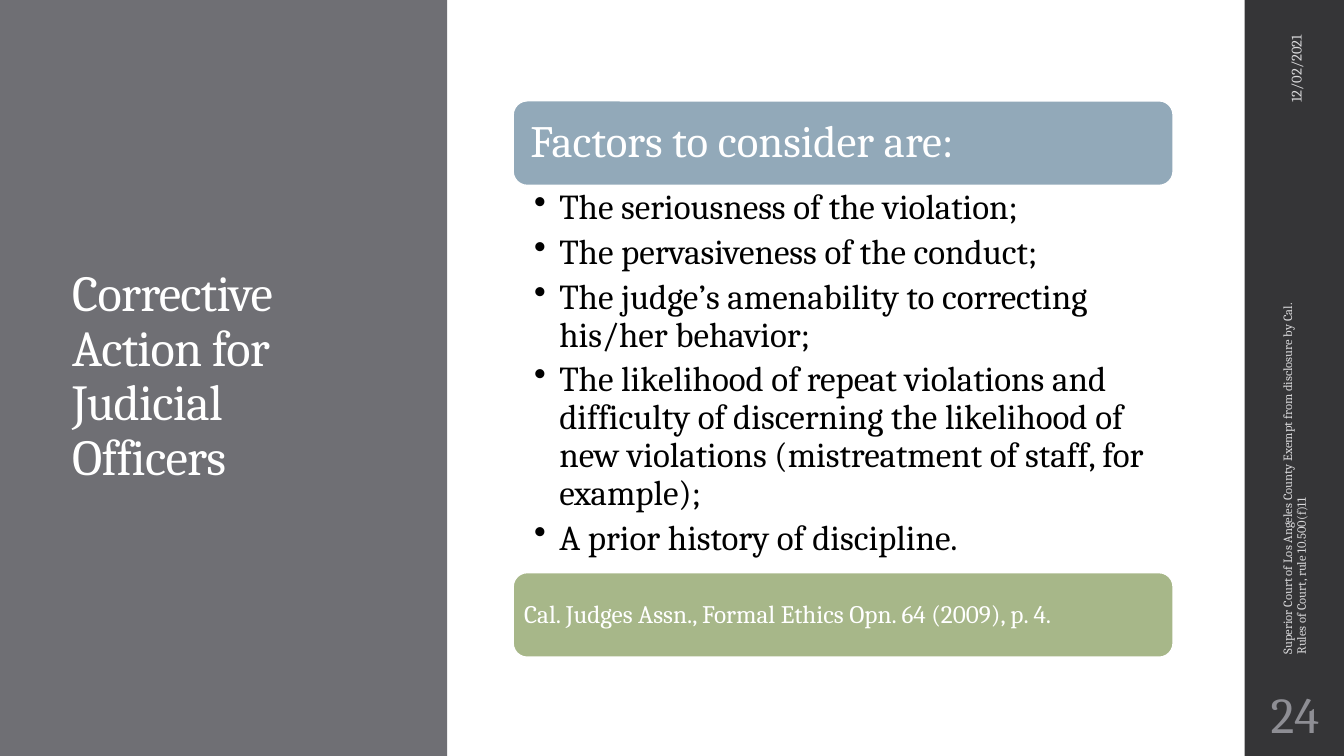
from dataclasses import dataclass

from lxml import etree
from pptx import Presentation
from pptx.dml.color import RGBColor
from pptx.enum import shapes, text
from pptx.oxml.ns import qn
from pptx.util import Pt


@dataclass(frozen=True)
class Theme:
    font: str = "Cambria"
    white: str = "FFFFFF"
    black: str = "000000"
    panel: str = "6F6F74"
    strip: str = "353537"
    blue: str = "92A9B9"
    green: str = "A7B789"
    pale: str = "D9D9DB"
    grey: str = "8E8E94"
    title: float = 36
    heading: float = 32
    bullet: float = 25
    citation: float = 18
    date: float = 10.5
    footer: float = 9


theme = Theme()
LEFT, CENTER, RIGHT = text.PP_ALIGN.LEFT, text.PP_ALIGN.CENTER, text.PP_ALIGN.RIGHT
MIDDLE, TOP = text.MSO_ANCHOR.MIDDLE, text.MSO_ANCHOR.TOP


def add_block(box, kind, fill, line=None):
    sp = s.shapes.add_shape(kind, *map(Pt, box))
    sp.shadow.inherit = False
    sp.fill.solid()
    sp.fill.fore_color.rgb = RGBColor.from_string(fill)
    if line:
        sp.line.color.rgb = RGBColor.from_string(line)
        sp.line.width = Pt(1.1)
    else:
        sp.line.fill.background()
    return sp


def write(sp, lines, size, color, insets=(7.2, 3.6, 7.2, 3.6), align=LEFT,
          anchor=MIDDLE, spacing=0.9, after=0):
    """Fill a shape with one paragraph per line; insets run left, top, right, bottom."""
    tf = sp.text_frame
    tf.word_wrap = True
    tf.vertical_anchor = anchor
    tf.margin_left, tf.margin_top, tf.margin_right, tf.margin_bottom = map(Pt, insets)
    tf.text = "\n".join(lines)
    for p in tf.paragraphs:
        p.alignment = align
        p.line_spacing = spacing
        p.space_after = Pt(after)
        p.font.name = theme.font
        p.font.size = Pt(size)
        p.font.color.rgb = RGBColor.from_string(color)
    return tf


prs = Presentation()
prs.slide_width, prs.slide_height = Pt(960), Pt(540)
s = prs.slides.add_slide(prs.slide_layouts[6])

# Title panel
add_block((0, 0, 319.5, 540), shapes.MSO_SHAPE.RECTANGLE, theme.panel)
title = s.shapes.add_textbox(Pt(44.5), Pt(65.5), Pt(214), Pt(408))
tf = write(title, ["Corrective Action for Judicial Officers"], theme.title, theme.white)
tf.paragraphs[0].runs[0].font._element.set("spc", "-50")

# Factors: heading bar, bullets, citation bar
left, top, width, bar, body = 366.5, 72, 471.5, 60.5, 276.5
bars = [
    (top, theme.blue, "Factors to consider are:", theme.heading, 9.4),
    (top + bar + body, theme.green,
     "Cal. Judges Assn., Formal Ethics Opn. 64 (2009), p. 4.", theme.citation, 5),
]
for y, fill, line, size, inset in bars:
    sp = add_block((left, y, width, bar), shapes.MSO_SHAPE.ROUNDED_RECTANGLE,
                   fill, theme.white)
    write(sp, [line], size, theme.white, insets=(inset,) * 4)

factors = [
    "The seriousness of the violation;",
    "The pervasiveness of the conduct;",
    "The judge’s amenability to correcting his/her behavior;",
    "The likelihood of repeat violations and difficulty of discerning the likelihood "
    "of new violations (mistreatment of staff, for example);",
    "A prior history of discipline.",
]
sp = s.shapes.add_textbox(Pt(left), Pt(top + bar), Pt(width), Pt(body))
tf = write(sp, factors, theme.bullet, theme.black, insets=(15, 3, 18, 3),
           anchor=TOP, after=5)
for p in tf.paragraphs:
    pPr = p._p.get_or_add_pPr()
    pPr.set("marL", str(Pt(18)))
    pPr.set("indent", str(-Pt(18)))
    bullet = etree.Element(qn("a:buChar"), char="•")
    pPr.find(qn("a:spcAft")).addnext(bullet)

# Side strip: footer, date, slide number
add_block((889, 0, 71, 540), shapes.MSO_SHAPE.RECTANGLE, theme.strip)
footer = s.shapes.add_textbox(Pt(784), Pt(319), Pt(282), Pt(29))
footer.rotation = 270
write(footer, ["Superior Court of Los Angeles County Exempt from disclosure by Cal. "
               "Rules of Court, rule 10.500(f)11"], theme.footer, theme.pale, after=6)
date = s.shapes.add_textbox(Pt(850.5), Pt(78.5), Pt(150), Pt(29))
date.rotation = 270
write(date, ["12/02/2021"], theme.date, theme.pale, align=RIGHT, spacing=1.0)
number = s.shapes.add_textbox(Pt(889), Pt(486), Pt(72), Pt(47))
write(number, ["24"], theme.title, theme.grey, insets=(3.6,) * 4, align=CENTER, spacing=1.0)

prs.save("out.pptx")
